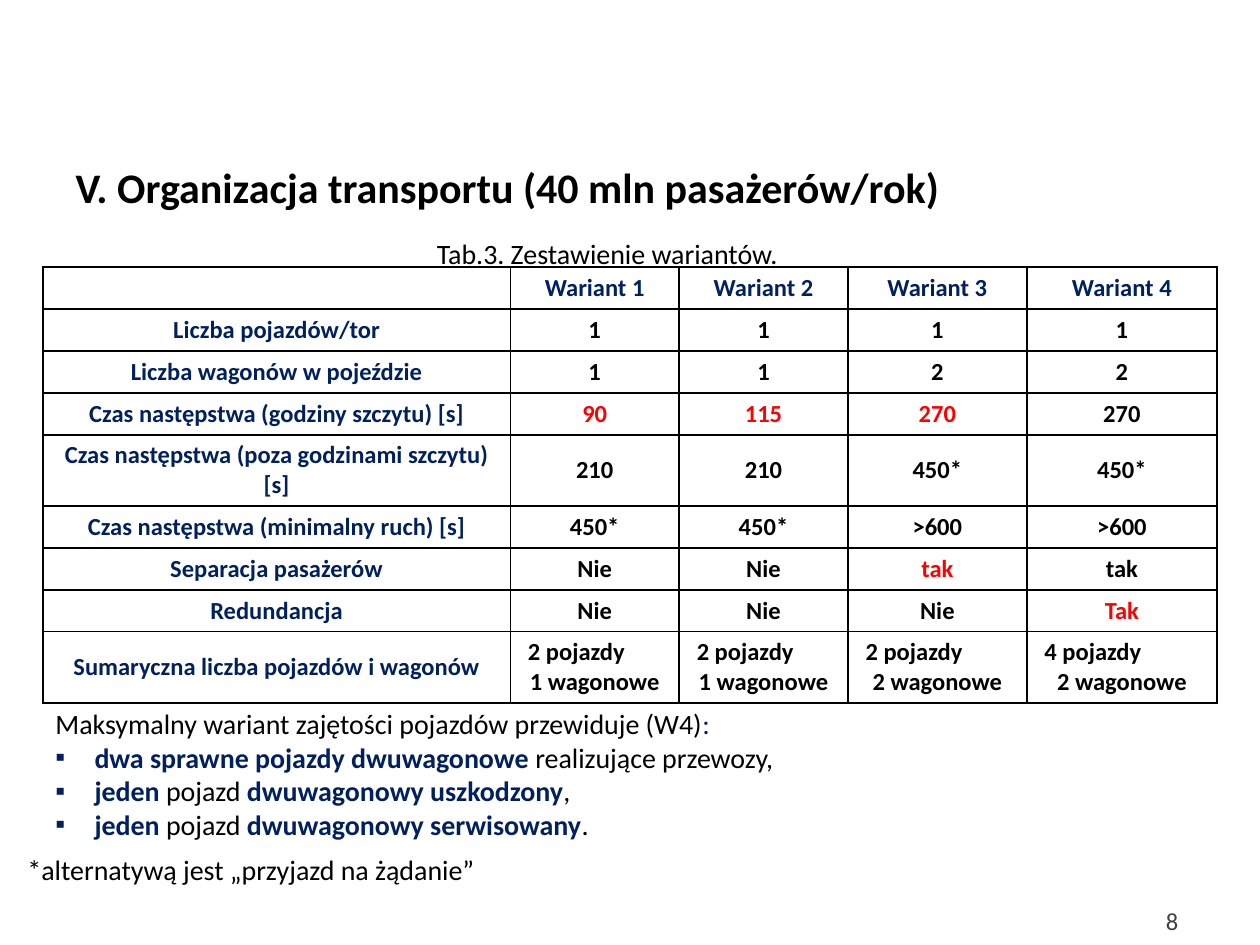
import pptx
import pptx.util
import pptx.dml.color
import pptx.enum.text
import pptx.oxml
import pptx.oxml.ns
from pptx.util import Inches

BLACK = pptx.dml.color.RGBColor(0, 0, 0)
GRAY = pptx.dml.color.RGBColor(0x40, 0x40, 0x40)
NAVY = pptx.dml.color.RGBColor(0, 0x20, 0x60)
RED = pptx.dml.color.RGBColor(0xFF, 0, 0)
ALIGN = pptx.enum.text.PP_ALIGN
ANCHOR = pptx.enum.text.MSO_ANCHOR

COLUMN_WIDTHS = [3.71, 1.34, 1.34, 1.42, 1.51]
LOW_ROW, HIGH_ROW = 0.333, 0.565
ROWS = [
    ["", "Wariant 1", "Wariant 2", "Wariant 3", "Wariant 4"],
    ["Liczba pojazdów/tor", "1", "1", "1", "1"],
    ["Liczba wagonów w pojeździe", "1", "1", "2", "2"],
    ["Czas następstwa (godziny szczytu) [s]", "90", "115", "270", "270"],
    ["Czas następstwa (poza godzinami szczytu) [s]", "210", "210", "450*", "450*"],
    ["Czas następstwa (minimalny ruch) [s]", "450*", "450*", ">600", ">600"],
    ["Separacja pasażerów", "Nie", "Nie", "tak", "tak"],
    ["Redundancja", "Nie", "Nie", "Nie", "Tak"],
    ["Sumaryczna liczba pojazdów i wagonów", "2 pojazdy\n1 wagonowe",
     "2 pojazdy\n1 wagonowe", "2 pojazdy\n2 wagonowe", "4 pojazdy\n2 wagonowe"],
]
HIGH_ROWS = {4, 8}
RED_CELLS = {(3, 1), (3, 2), (3, 3), (6, 3), (7, 4)}
FLEET_INTRO = [("Maksymalny wariant zajętości pojazdów przewiduje (W4)", BLACK, False),
               (":", NAVY, False)]
FLEET_ITEMS = [
    [("dwa sprawne pojazdy dwuwagonowe ", NAVY, True), ("realizujące przewozy,", BLACK, False)],
    [("jeden", NAVY, True), (" pojazd ", BLACK, False),
     ("dwuwagonowy uszkodzony", NAVY, True), (",", BLACK, False)],
    [("jeden", NAVY, True), (" pojazd ", BLACK, False),
     ("dwuwagonowy serwisowany", NAVY, True), (".", BLACK, False)],
]


class SlideBuilder:
    font_name = "Calibri"

    def __init__(self, slide):
        self.slide = slide

    def add_runs(self, paragraph, runs, size, align):
        paragraph.alignment = align
        for text, color, bold in runs:
            run = paragraph.add_run()
            run.text = text
            run.font.name = self.font_name
            run.font.size = pptx.util.Pt(size)
            run.font.color.rgb = color
            run.font.bold = bold

    def place(self, shape, left, top, width, height):
        shape.left, shape.top = Inches(left), Inches(top)
        shape.width, shape.height = Inches(width), Inches(height)
        frame = shape.text_frame
        frame.word_wrap = True
        frame.auto_size = pptx.enum.text.MSO_AUTO_SIZE.NONE
        frame.vertical_anchor = ANCHOR.TOP
        return frame

    def title(self, text, *box):
        frame = self.place(self.slide.shapes.title, *box)
        self.add_runs(frame.paragraphs[0], [(text, BLACK, True)], 24, ALIGN.LEFT)

    def text(self, text, *box, size=16, color=BLACK, align=ALIGN.LEFT):
        frame = self.place(self.slide.shapes.add_textbox(0, 0, 0, 0), *box)
        self.add_runs(frame.paragraphs[0], [(text, color, False)], size, align)

    def set_bullet(self, paragraph, symbol, indent):
        properties = paragraph._p.get_or_add_pPr()
        properties.set("marL", str(Inches(indent)))
        properties.set("indent", str(-Inches(indent)))
        tag = "a:buChar" if symbol else "a:buNone"
        bullet = pptx.oxml.parse_xml(f"<{tag} {pptx.oxml.ns.nsdecls('a')}/>")
        if symbol:
            bullet.set("char", symbol)
        properties.append(bullet)

    def bullet_list(self, intro, items, *box):
        frame = self.place(self.slide.placeholders[1], *box)
        for index, runs in enumerate([intro, *items]):
            paragraph = frame.add_paragraph() if index else frame.paragraphs[0]
            self.set_bullet(paragraph, "▪" if index else None, 0.31 if index else 0)
            paragraph.space_before = pptx.util.Pt(0)
            self.add_runs(paragraph, runs, 16, ALIGN.JUSTIFY)

    def set_borders(self, cell):
        properties = cell._tc.get_or_add_tcPr()
        for position, side in enumerate(["lnL", "lnR", "lnT", "lnB"]):
            properties.insert(position, pptx.oxml.parse_xml(
                f'<a:{side} {pptx.oxml.ns.nsdecls("a")} w="12700">'
                f'<a:solidFill><a:srgbClr val="{BLACK}"/></a:solidFill></a:{side}>'))

    def cell(self, cell, text, color):
        cell.fill.background()
        cell.vertical_anchor = ANCHOR.MIDDLE
        cell.margin_top = cell.margin_bottom = Inches(0.01)
        self.set_borders(cell)
        lines = text.split("\n") if text else []
        for index, line in enumerate(lines):
            paragraph = cell.text_frame.add_paragraph() if index else cell.text_frame.paragraphs[0]
            leading = index < len(lines) - 1
            if leading:
                paragraph._p.get_or_add_pPr().set("marL", str(Inches(0.04)))
            self.add_runs(paragraph, [(line, color, True)], 14,
                          ALIGN.LEFT if leading else ALIGN.CENTER)

    def table(self, rows, left, top):
        heights = [HIGH_ROW if index in HIGH_ROWS else LOW_ROW for index in range(len(rows))]
        table = self.slide.shapes.add_table(
            len(rows), len(COLUMN_WIDTHS), Inches(left), Inches(top),
            Inches(sum(COLUMN_WIDTHS)), Inches(sum(heights))).table
        table.first_row = table.horz_banding = False
        for column, width in zip(table.columns, COLUMN_WIDTHS):
            column.width = Inches(width)
        for row_index, texts in enumerate(rows):
            table.rows[row_index].height = Inches(heights[row_index])
            for column_index, text in enumerate(texts):
                header = row_index == 0 or column_index == 0
                red = (row_index, column_index) in RED_CELLS
                color = NAVY if header else RED if red else BLACK
                self.cell(table.cell(row_index, column_index), text, color)


def main():
    presentation = pptx.Presentation()
    presentation.slide_width, presentation.slide_height = Inches(10), Inches(7.5)
    builder = SlideBuilder(presentation.slides.add_slide(presentation.slide_layouts[1]))
    builder.title("V. Organizacja transportu (40 mln pasażerów/rok)", 0.5, 1.23, 9, 0.44)
    builder.text("8", 7.12, 7.14, 2.33, 0.33, size=14, color=GRAY, align=ALIGN.RIGHT)
    builder.text("*alternatywą jest „przyjazd na żądanie”", 0.12, 6.72, 4.34, 0.37)
    builder.table(ROWS, 0.34, 2.12)
    builder.bullet_list(FLEET_INTRO, FLEET_ITEMS, 0.34, 5.56, 8.49, 1.18)
    builder.text("Tab.3. Zestawienie wariantów.", 0.32, 1.83, 9, 0.37, align=ALIGN.CENTER)
    presentation.save("out.pptx")


if __name__ == "__main__":
    main()
